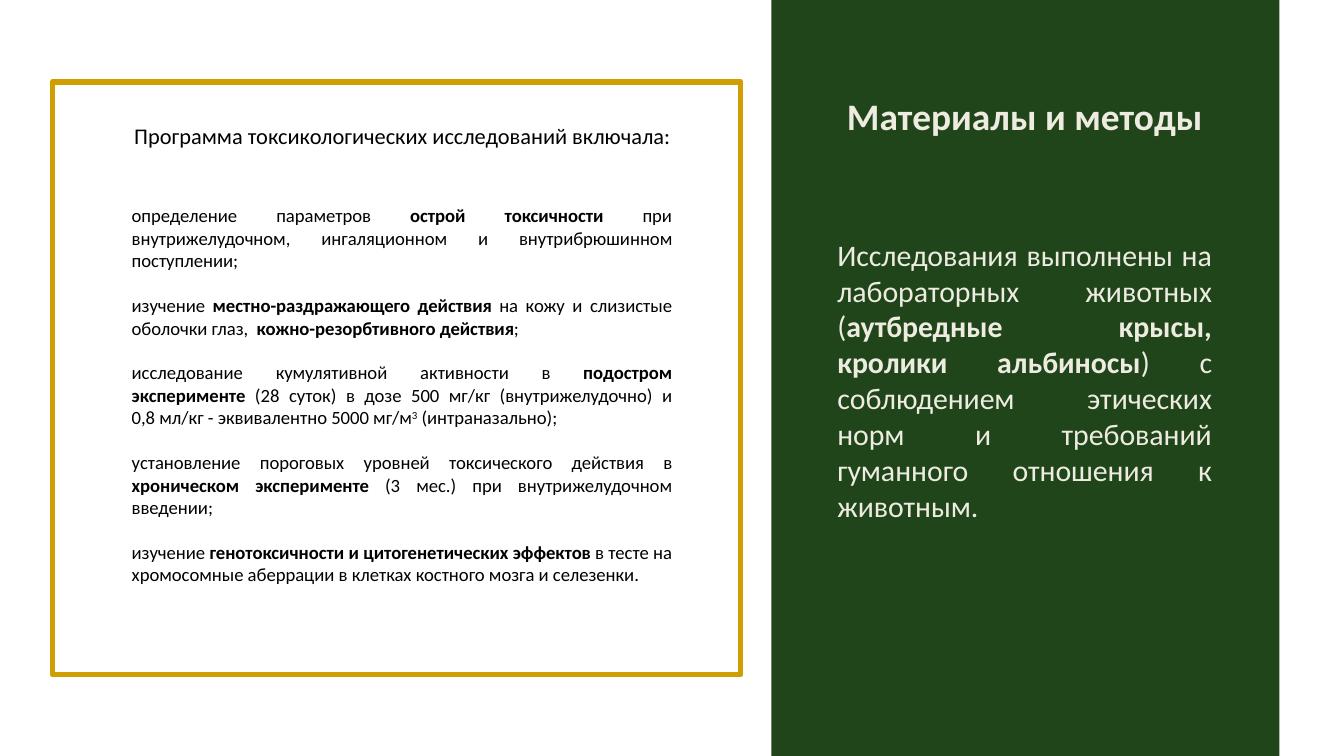
from pptx import Presentation
from pptx.dml.color import RGBColor
from pptx.enum.shapes import MSO_SHAPE
from pptx.enum.text import MSO_ANCHOR, MSO_AUTO_SIZE, PP_ALIGN
from pptx.util import Inches, Pt
from lxml.etree import SubElement
from pptx.oxml.ns import qn

GREEN = RGBColor(0x21, 0x45, 0x1B)
GOLD = RGBColor(0xD0, 0x9E, 0x00)
CREAM = RGBColor(0xEE, 0xEC, 0xE1)
BLACK = RGBColor(0, 0, 0)

FONT = "Calibri"
NO_BREAK_SPACE = chr(160)
TWO_CONTENT_LAYOUT = 3
PLAIN, BOLD, SUPER = "plain", "bold", "super"

TITLE = [[("Материалы и методы", PLAIN)]]
PROGRAM_HEADING = [[("Программа токсикологических исследований включала:", PLAIN)]]
PROGRAM = [
    [("определение параметров ", PLAIN),
     ("острой токсичности ", BOLD),
     ("при внутрижелудочном, ингаляционном и внутрибрюшинном поступлении;", PLAIN)],
    [("изучение ", PLAIN),
     ("местно-раздражающего действия ", BOLD),
     ("на кожу и слизистые оболочки глаз,  ", PLAIN),
     ("кожно-резорбтивного действия", BOLD),
     (";", PLAIN)],
    [("исследование кумулятивной активности в ", PLAIN),
     ("подостром эксперименте ", BOLD),
     ("(28 суток) в дозе 500 мг/кг (внутрижелудочно) и "
      f"0,8{NO_BREAK_SPACE}мл/кг - эквивалентно 5000 мг/м", PLAIN),
     ("3", SUPER),
     (" (интраназально);", PLAIN)],
    [("установление пороговых уровней токсического действия в ", PLAIN),
     ("хроническом эксперименте ", BOLD),
     ("(3 мес.) при внутрижелудочном введении;", PLAIN)],
    [("изучение ", PLAIN),
     ("генотоксичности и цитогенетических эффектов ", BOLD),
     ("в тесте на хромосомные аберрации в клетках костного мозга и селезенки.", PLAIN)],
]
ANIMALS = [
    [("Исследования выполнены на лабораторных животных (", PLAIN),
     ("аутбредные крысы, кролики альбиносы", BOLD),
     (") с соблюдением этических норм и требований гуманного отношения к животным.",
      PLAIN)],
]


def place(shape, left, top, width, height):
    shape.left, shape.top = Inches(left), Inches(top)
    shape.width, shape.height = Inches(width), Inches(height)


def add_rectangle(slide, left, top, width, height):
    """Add a bare rectangle behind the slide's placeholders."""
    rectangle = slide.shapes.add_shape(
        MSO_SHAPE.RECTANGLE, Inches(left), Inches(top), Inches(width), Inches(height))
    rectangle.shadow.inherit = False
    rectangle.fill.background()
    rectangle.line.fill.background()
    slide.shapes.title.element.addprevious(rectangle.element)
    return rectangle


def remove_bullet(paragraph):
    properties = paragraph._p.get_or_add_pPr()
    properties.set("marL", "0")
    properties.set("indent", "0")
    SubElement(properties, qn("a:buNone"))


def write_text(shape, paragraphs, size, color, align=PP_ALIGN.JUSTIFY, bold=None, gap=0):
    """Fill a shape with paragraphs of (text, style) pieces, gap points apart."""
    frame = shape.text_frame
    frame.word_wrap = True
    frame.auto_size = MSO_AUTO_SIZE.NONE
    frame.vertical_anchor = MSO_ANCHOR.TOP
    for index, pieces in enumerate(paragraphs):
        paragraph = frame.paragraphs[0] if index == 0 else frame.add_paragraph()
        paragraph.alignment = align
        paragraph.space_before = Pt(gap if index else 0)
        remove_bullet(paragraph)
        font = paragraph.font
        font.name, font.size, font.bold = FONT, Pt(size), bold
        font.color.rgb = color
        for text, style in pieces:
            run = paragraph.add_run()
            run.text = text
            if style == BOLD:
                run.font.bold = True
            elif style == SUPER:
                run._r.get_or_add_rPr().set("baseline", "30000")


def main():
    presentation = Presentation()
    presentation.slide_width = Inches(10)
    presentation.slide_height = presentation.slide_width * 9 // 16
    layout = presentation.slide_layouts[TWO_CONTENT_LAYOUT]
    slide = presentation.slides.add_slide(layout)

    side_panel = add_rectangle(slide, 5.74, 0, 3.78, 5.62)
    side_panel.height = presentation.slide_height
    side_panel.fill.solid()
    side_panel.fill.fore_color.rgb = GREEN

    program_frame = add_rectangle(slide, 0.39, 0.61, 5.12, 4.41)
    program_frame.line.color.rgb = GOLD
    program_frame.line.width = Pt(3)

    title = slide.shapes.title
    place(title, 5.25, 0.64, 4.75, 0.44)
    write_text(title, TITLE, 20, CREAM, PP_ALIGN.CENTER, bold=True)

    program = slide.placeholders[1]
    place(program, 0.88, 1.47, 4.22, 2.96)
    write_text(program, PROGRAM, 10, BLACK, gap=12)

    animals = slide.placeholders[2]
    place(animals, 6.13, 1.71, 2.99, 2.26)
    write_text(animals, ANIMALS, 16, CREAM)

    program_heading = slide.shapes.add_textbox(
        Inches(0.9), Inches(0.86), Inches(4.27), Inches(0.3))
    write_text(program_heading, PROGRAM_HEADING, 12, BLACK)

    presentation.save("out.pptx")


if __name__ == "__main__":
    main()
